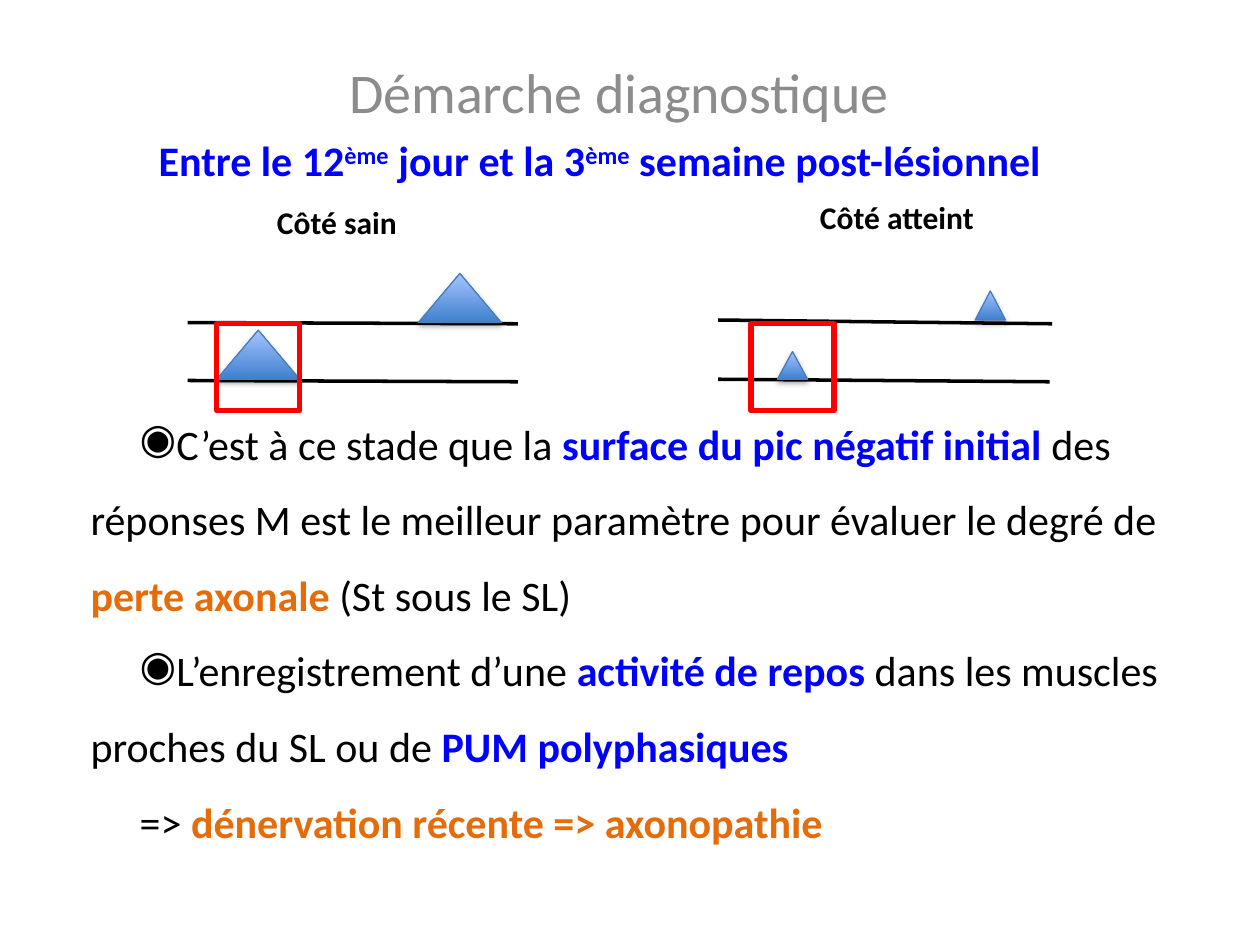
from pptx import Presentation
from pptx.dml.color import RGBColor
from pptx.enum.shapes import MSO_CONNECTOR, MSO_SHAPE
from pptx.enum.text import MSO_AUTO_SIZE, PP_ALIGN
from pptx.oxml.ns import qn
from pptx.util import Inches, Pt
from lxml.etree import SubElement

BLACK = RGBColor(0x00, 0x00, 0x00)
GREY = RGBColor(0x8C, 0x8C, 0x8C)
BLUE = RGBColor(0x00, 0x00, 0xFF)
ORANGE = RGBColor(0xE4, 0x6C, 0x0A)
RED = RGBColor(0xFF, 0x00, 0x00)
PEAK_DARK = RGBColor(0x3F, 0x80, 0xCE)
PEAK_LIGHT = RGBColor(0xA4, 0xC4, 0xFF)
PEAK_EDGE = RGBColor(0x4B, 0x7E, 0xBC)

FONT = "Calibri"
COLUMNS, ROWS = 100, 75
BULLET_INDENT = Inches(0.39)


class SlideSketch:
    """Draws on one slide; every length counts cells of a 100 x 75 grid."""

    def __init__(self, prs):
        self.slide = prs.slides.add_slide(prs.slide_layouts[6])
        self.shapes = self.slide.shapes
        self.cell_w = prs.slide_width / COLUMNS
        self.cell_h = prs.slide_height / ROWS

    def place(self, col, row, width, height):
        return (round(col * self.cell_w), round(row * self.cell_h),
                round(width * self.cell_w), round(height * self.cell_h))

    def text(self, box, paragraphs, size, align=PP_ALIGN.LEFT, spacing=1.0, wrap=True):
        """Each paragraph is a list of (wording, colour, bold, superscript) runs."""
        frame = self.shapes.add_textbox(*self.place(*box)).text_frame
        frame.word_wrap = wrap
        frame.auto_size = MSO_AUTO_SIZE.NONE if wrap else MSO_AUTO_SIZE.SHAPE_TO_FIT_TEXT
        for index, pieces in enumerate(paragraphs):
            paragraph = frame.add_paragraph() if index else frame.paragraphs[0]
            paragraph.alignment = align
            paragraph.line_spacing = spacing
            for wording, colour, bold, raised in pieces:
                run = paragraph.add_run()
                run.text = wording
                run.font.name, run.font.size = FONT, Pt(size)
                run.font.bold, run.font.color.rgb = bold, colour
                if raised:
                    run.font._element.set("baseline", "30000")
        return frame

    def indent(self, paragraph, bullet=None):
        """Indents the first line, after a bullet sign if one is given."""
        props = paragraph._p.get_or_add_pPr()
        props.set("marL", "0")
        props.set("indent", str(BULLET_INDENT))
        if bullet:
            SubElement(props, qn("a:buChar"), char=bullet)
        else:
            SubElement(props, qn("a:buNone"))

    def trace(self, col1, row1, col2, row2):
        x1, y1, x2, y2 = self.place(col1, row1, col2, row2)
        line = self.shapes.add_connector(MSO_CONNECTOR.STRAIGHT, x1, y1, x2, y2)
        line.line.color.rgb = BLACK
        line.line.width = Pt(2)
        SubElement(line._element.spPr, qn("a:effectLst"))

    def peak(self, *box):
        peak = self.shapes.add_shape(MSO_SHAPE.ISOSCELES_TRIANGLE, *self.place(*box))
        peak.fill.gradient()
        peak.fill.gradient_angle = 90
        for stop, colour in zip(peak.fill.gradient_stops, (PEAK_DARK, PEAK_LIGHT)):
            stop.color.rgb = colour
        peak.line.color.rgb = PEAK_EDGE
        peak.line.width = Pt(0.75)
        peak.shadow.inherit = False
        effects = peak._element.spPr.find(qn("a:effectLst"))
        shadow = SubElement(effects, qn("a:outerShdw"), blurRad=str(Pt(3.1)),
                            dist=str(Pt(1.8)), dir="5400000", rotWithShape="0")
        tint = SubElement(shadow, qn("a:srgbClr"), val=str(BLACK))
        SubElement(tint, qn("a:alpha"), val="35000")

    def frame(self, *box):
        frame = self.shapes.add_shape(MSO_SHAPE.RECTANGLE, *self.place(*box))
        frame.fill.background()
        frame.line.color.rgb = RED
        frame.line.width = Pt(3)
        frame.shadow.inherit = False


def plain(wording):
    return wording, BLACK, False, False


def strong(wording, colour=BLUE, raised=False):
    return wording, colour, True, raised


FINDINGS = [
    [plain("C’est à ce stade que la "), strong("surface du pic négatif initial "),
     plain("des réponses M est le meilleur paramètre pour évaluer le degré de "),
     strong("perte axonale ", ORANGE), plain("(St sous le SL)")],
    [plain("L’enregistrement d’une "), strong("activité de repos"),
     plain(" dans les muscles proches du SL ou de "), strong("PUM polyphasiques")],
    [plain("=> "), strong("dénervation récente => axonopathie", ORANGE)],
]
PERIOD = [strong("Entre le 12"), strong("ème", raised=True), strong(" jour et la 3"),
          strong("ème", raised=True), strong(" semaine post-lésionnel")]

# label, label box, traces (from, to), peaks, left edge of the red frame
SIDES = [
    ("Côté sain", (21, 15.6, 11.6, 4),
     [(14.9, 25.6, 41.1, 25.7), (14.9, 30.2, 41.1, 30.3)],
     [(33.2, 21.7, 6.6, 3.9), (17.2, 26.2, 6.6, 3.9)], 17.2),
    ("Côté atteint", (64.1, 15.2, 14.4, 4),
     [(57, 25.4, 83.5, 25.7), (57, 30.1, 83.3, 30.3)],
     [(77.4, 23.1, 2.4, 2.3), (61.7, 27.9, 2.4, 2.2)], 59.6),
]


def main():
    prs = Presentation()
    prs.slide_width, prs.slide_height = Inches(10), Inches(7.5)
    sketch = SlideSketch(prs)

    findings = sketch.text((6.2, 30.7, 92.1, 37), FINDINGS, 24, spacing=1.5)
    for paragraph, bullet in zip(findings.paragraphs, ("◉", "◉", None)):
        sketch.indent(paragraph, bullet)

    title = [("Démarche diagnostique", GREY, False, False)]
    sketch.text((0, 4.1, 98.3, 6.4), [title], 32, PP_ALIGN.CENTER)
    sketch.text((0, 10.2, 95.2, 5), [PERIOD], 24, PP_ALIGN.CENTER)

    for label, label_box, traces, peaks, frame_left in SIDES:
        for ends in traces:
            sketch.trace(*ends)
        for box in peaks:
            sketch.peak(*box)
        sketch.frame(frame_left, 25.7, 6.6, 6.9)
        sketch.text(label_box, [[strong(label, BLACK)]], 18, wrap=False)

    prs.save("out.pptx")


if __name__ == "__main__":
    main()
